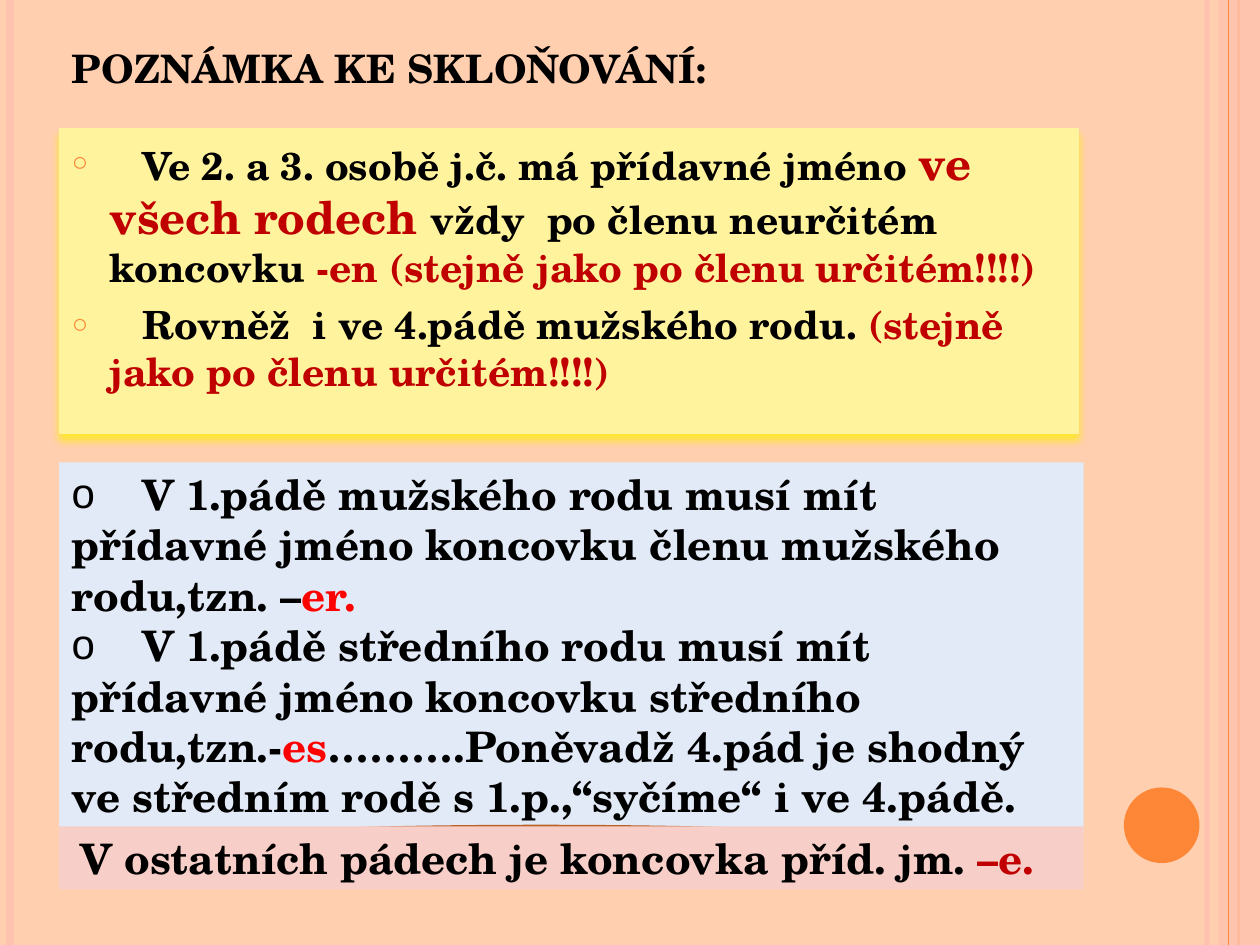
from lxml import etree
from pptx import Presentation
from pptx.dml.color import RGBColor
from pptx.enum.shapes import MSO_CONNECTOR, MSO_SHAPE
from pptx.enum.text import MSO_ANCHOR, MSO_AUTO_SIZE, PP_ALIGN
from pptx.oxml import parse_xml
from pptx.oxml.ns import nsdecls, qn
from pptx.util import Inches, Pt

FONT = "TeX Gyre Schola"
BLACK, DARK_RED, RED = "000000", "C00000", "FF0000"
ORANGE, PINK, YELLOW = "FE8637", "FEC3AE", "FFF39D"
LEFT, WIDTH = 0.47, 8.13
TEXT_START = 0.56  # where the words begin after a bullet

# x, colour, width in points, opacity in percent
STRIPES = [(9.58, PINK, 3, 93), (0.08, PINK, 4.5, 100), (9.83, ORANGE, 1.5, 100)]
EDGE_LINE = (9.75, ORANGE, 0.75, 100)

# Paragraphs of runs: text, size, colour
TITLE = [[("poznámka ke skloňování:", 28, BLACK)]]
ARTICLE_RULES = [
    [("\tVe 2. a 3. osobě j.č. má přídavné jméno ", 22.2, BLACK),
     ("ve všech rodech ", 25.9, DARK_RED),
     ("vždy  po členu neurčitém koncovku ", 22.2, BLACK),
     ("-en (stejně jako po členu určitém!!!!)", 22.2, DARK_RED)],
    [("\tRovněž  i ve 4.pádě mužského rodu.", 22.2, BLACK),
     (" (stejně jako po členu určitém!!!!)", 22.2, DARK_RED)],
]
FIRST_CASE_RULES = [
    [("\tV 1.pádě mužského rodu musí mít přídavné jméno koncovku "
      "členu mužského rodu,tzn. –", 24, BLACK),
     ("er.", 24, RED)],
    [("\tV 1.pádě středního rodu musí mít přídavné jméno koncovku "
      "středního rodu,tzn.-", 24, BLACK),
     ("es", 24, RED),
     ("……….Poněvadž 4.pád je shodný ve středním rodě s 1.p.,"
      "“syčíme“ i ve 4.pádě.", 24, BLACK)],
]
OTHER_CASES = [
    [(" ", 18, BLACK),
     ("V ostatních pádech je koncovka příd. jm. ", 24, BLACK),
     ("–e.", 24, DARK_RED)],
]


def paint(fmt, color):
    fmt.solid()
    fmt.fore_color.rgb = RGBColor.from_string(color)


def set_alpha(fill_parent, percent):
    clr = next(fill_parent.iter(qn("a:srgbClr")))
    etree.SubElement(clr, qn("a:alpha")).set("val", str(percent * 1000))


def place(sp, left, top, width, height):
    sp.left, sp.top = Inches(left), Inches(top)
    sp.width, sp.height = Inches(width), Inches(height)


def add_stripe(s, x, color, width, opacity):
    line = s.shapes.add_connector(
        MSO_CONNECTOR.STRAIGHT, Inches(x), 0, Inches(x), Inches(7.5))
    paint(line.line.fill, color)
    line.line.width = Pt(width)
    sp_pr = line._element.spPr
    if opacity < 100:
        set_alpha(sp_pr, opacity)
    etree.SubElement(sp_pr, qn("a:effectLst"))


def add_shape(s, kind, box, color):
    sp = s.shapes.add_shape(kind, *(Inches(v) for v in box))
    sp.shadow.inherit = False
    paint(sp.fill, color)
    sp.line.fill.background()
    return sp


def add_bullet(p, char, margin=0.0, color=None, size=100):
    """Give the paragraph a hanging bullet and a tab where its words begin."""
    p_pr = p._p.get_or_add_pPr()
    p_pr.set("marL", str(Inches(margin)))
    p_pr.set("indent", str(-Inches(margin)))
    ns = nsdecls("a")
    if color:
        p_pr.append(parse_xml(
            f'<a:buClr {ns}><a:srgbClr val="{color}"/></a:buClr>'))
    for xml in (f'<a:buSzPct {ns} val="{size * 1000}"/>',
                f'<a:buFont {ns} typeface="Arial"/>',
                f'<a:buChar {ns} char="{char}"/>',
                f'<a:tabLst {ns}><a:tab pos="{Inches(TEXT_START)}" algn="l"/>'
                '</a:tabLst>'):
        p_pr.append(parse_xml(xml))


def write(sp, paragraphs, anchor=MSO_ANCHOR.TOP, before=0, bullet=None):
    tf = sp.text_frame
    tf.word_wrap = True
    tf.auto_size = MSO_AUTO_SIZE.NONE
    tf.vertical_anchor = anchor
    for i, runs in enumerate(paragraphs):
        p = tf.paragraphs[0] if i == 0 else tf.add_paragraph()
        p.alignment = PP_ALIGN.LEFT
        p.space_before = Pt(before)
        if bullet:
            add_bullet(p, **bullet)
        for text, size, color in runs:
            r = p.add_run()
            r.text = text
            r.font.name, r.font.size, r.font.bold = FONT, Pt(size), True
            paint(r.font.fill, color)


def main():
    prs = Presentation()
    prs.slide_width, prs.slide_height = Inches(10), Inches(7.5)
    s = prs.slides.add_slide(prs.slide_layouts[1])
    paint(s.background.fill, "FFCFAF")

    for stripe in STRIPES:
        add_stripe(s, *stripe)
    band = add_shape(s, MSO_SHAPE.RECTANGLE, (9.67, 0, 0.33, 7.5), PINK)
    set_alpha(band._element.spPr, 87)
    add_stripe(s, *EDGE_LINE)
    add_shape(s, MSO_SHAPE.OVAL, (8.92, 6.25, 0.6, 0.6), ORANGE)

    title = s.shapes.title
    place(title, LEFT, 0.39, 8.17, 0.4)
    write(title, TITLE, MSO_ANCHOR.BOTTOM)
    for r in title.text_frame.paragraphs[0].runs:
        r.font._element.set("cap", "small")

    body = s.placeholders[1]
    place(body, LEFT, 1.02, 8.09, 2.42)
    paint(body.fill, YELLOW)
    paint(body.line.fill, YELLOW)
    body.line.width = Pt(0.75)
    body._element.spPr.append(parse_xml(
        f'<a:effectLst {nsdecls("a")}><a:outerShdw blurRad="{Pt(4)}" '
        f'dist="{Pt(4)}" dir="5400000" rotWithShape="0">'
        '<a:srgbClr val="FFE636"/></a:outerShdw></a:effectLst>'))
    write(body, ARTICLE_RULES, before=6,
          bullet=dict(char="○", margin=0.3, color=ORANGE, size=70))

    blue = add_shape(s, MSO_SHAPE.RECTANGLE, (LEFT, 3.67, WIDTH, 2.93), "E3EAF7")
    write(blue, FIRST_CASE_RULES, bullet=dict(char="o"))

    ellipse = add_shape(s, MSO_SHAPE.OVAL, (1.56, 6.56, 5.47, 0.24), ORANGE)
    paint(ellipse.line.fill, "BC6329")
    ellipse.line.width = Pt(2)

    rose = add_shape(s, MSO_SHAPE.RECTANGLE, (LEFT, 6.56, WIDTH, 0.5), "F8CFC8")
    write(rose, OTHER_CASES)

    prs.save("out.pptx")


if __name__ == "__main__":
    main()
